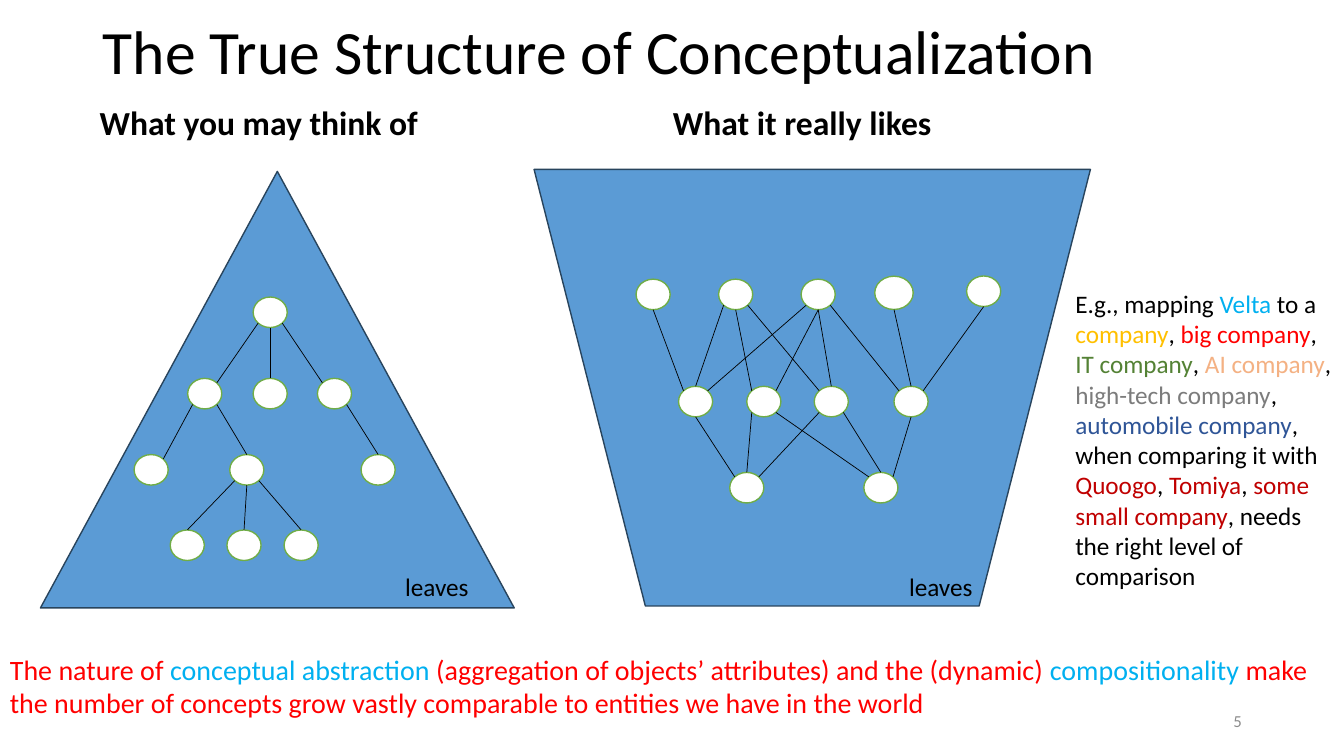
from dataclasses import dataclass
from math import sqrt

from lxml import etree
from pptx import Presentation
from pptx.dml.color import RGBColor
from pptx.enum.shapes import MSO_CONNECTOR, MSO_SHAPE
from pptx.enum.text import MSO_ANCHOR, PP_ALIGN
from pptx.oxml.ns import qn
from pptx.shapes.group import GroupShape
from pptx.slide import Slide
from pptx.util import Cm, Pt

STRAIGHT = MSO_CONNECTOR.STRAIGHT
OVAL = MSO_SHAPE.OVAL
TRIANGLE = MSO_SHAPE.FLOWCHART_EXTRACT
TRAPEZOID = MSO_SHAPE.FLOWCHART_MANUAL_OPERATION
TOP, MIDDLE, BOTTOM = MSO_ANCHOR.TOP, MSO_ANCHOR.MIDDLE, MSO_ANCHOR.BOTTOM
LEFT, RIGHT = PP_ALIGN.LEFT, PP_ALIGN.RIGHT

FONT = "Calibri"
BLACK, WHITE, RED, SKY, DARK_RED = "000000", "FFFFFF", "FF0000", "00B0F0", "C00000"
D = 1 / sqrt(2)
SITES = {"T": (0, -1), "B": (0, 1), "TL": (-D, -D), "TR": (D, -D), "BL": (-D, D), "BR": (D, D)}


@dataclass(frozen=True)
class Label:
    box: tuple[float, float, float, float]
    runs: list[tuple[str, str]]
    size: int
    bold: bool = False
    anchor: MSO_ANCHOR = TOP
    align: PP_ALIGN = LEFT
    spacing: float = 1.0


@dataclass(frozen=True)
class Node:
    x: float
    y: float
    w: float = 0.86
    h: float = 0.77

    def site(self, name: str) -> tuple[float, float]:
        dx, dy = SITES[name]
        return self.x + dx * self.w / 2, self.y + dy * self.h / 2


@dataclass(frozen=True)
class Diagram:
    outline: MSO_SHAPE
    box: tuple[float, float, float, float]
    nodes: dict[str, Node]
    edges: list[str]
    leaves: Label


def color(value: str) -> RGBColor:
    return RGBColor.from_string(value)


def add_label(parent: Slide | GroupShape, label: Label) -> None:
    tf = parent.shapes.add_textbox(*map(Cm, label.box)).text_frame
    tf.word_wrap = True
    tf.vertical_anchor = label.anchor
    p = tf.paragraphs[0]
    p.alignment = label.align
    p.line_spacing = label.spacing
    p.font.name, p.font.size, p.font.bold = FONT, Pt(label.size), label.bold
    for text, hue in label.runs:
        r = p.add_run()
        r.text = text
        r.font.color.rgb = color(hue)


def add_filled(group: GroupShape, kind: MSO_SHAPE, box: tuple[float, float, float, float],
               fill: str, line: str) -> None:
    sp = group.shapes.add_shape(kind, *map(Cm, box))
    sp.shadow.inherit = False
    sp.fill.solid()
    sp.fill.fore_color.rgb = color(fill)
    sp.line.color.rgb = color(line)
    sp.line.width = Pt(1)


def add_edge(group: GroupShape, start: tuple[float, float], end: tuple[float, float]) -> None:
    line = group.shapes.add_connector(STRAIGHT, *map(Cm, start + end))
    line.line.color.rgb = color(BLACK)
    line.line.width = Pt(0.5)
    etree.SubElement(line._element.spPr, qn("a:effectLst"))


def add_diagram(s: Slide, diagram: Diagram) -> None:
    group = s.shapes.add_group_shape()
    add_filled(group, diagram.outline, diagram.box, "5B9BD5", "28445D")
    for n in diagram.nodes.values():
        add_filled(group, OVAL, (n.x - n.w / 2, n.y - n.h / 2, n.w, n.h), WHITE, "70AD47")
    for edge in diagram.edges:
        upper, upper_site, lower, lower_site = edge.split()
        add_edge(group, diagram.nodes[upper].site(upper_site),
                 diagram.nodes[lower].site(lower_site))
    add_label(group, diagram.leaves)


def row(prefix: str, y: float, xs: list[float]) -> dict[str, Node]:
    return {f"{prefix}{i}": Node(x, y) for i, x in enumerate(xs)}


def leaves_label(left: float) -> Label:
    return Label((left, 14.27, 2.44, 1.02), [("leaves", BLACK)], 18)


TREE = Diagram(
    TRIANGLE, (1.02, 4.32, 11.94, 11),
    row("a", 7.87, [6.81]) | row("b", 9.92, [5.16, 6.81, 8.43])
    | row("c", 11.84, [3.81, 6.22, 9.53]) | row("d", 13.74, [4.72, 6.15, 7.59]),
    ["a0 BL b0 TR", "a0 B b1 T", "a0 BR b2 TL", "b0 BL c0 TR", "b0 BR c1 T",
     "c1 BL d0 T", "c1 B d1 T", "c1 BR d2 T", "b2 BR c2 T"],
    leaves_label(9.96),
)

LATTICE = Diagram(
    TRAPEZOID, (13.46, 4.27, 14.02, 11),
    row("a", 7.42, [16.46, 18.54, 20.62])
    | {"a3": Node(22.53, 7.38, 0.97, 0.84), "a4": Node(24.79, 7.34)}
    | row("b", 10.12, [17.53, 19.25, 20.95, 22.96]) | row("c", 12.29, [18.82, 22.2]),
    ["b0 B c0 TL", "b1 BL c0 T", "b2 BL c0 TR", "b2 BR c1 T", "b1 BR c1 TL", "b3 B c1 TR",
     "a0 B b0 TL", "a1 BL b0 T", "a2 BL b0 TR", "a2 B b1 TR", "a1 B b1 TL", "a2 B b2 T",
     "a1 BR b2 TL", "a3 B b3 T", "a2 BR b3 TL", "a4 B b3 TR"],
    leaves_label(22.66),
)

LABELS = [
    Label((2.34, 0.03, 29.21, 2.69), [("The True Structure of Conceptualization", BLACK)], 44,
          anchor=MIDDLE, spacing=0.9),
    Label((2.26, 2.49, 9.45, 1.22), [("What you may think of", BLACK)], 24,
          bold=True, anchor=BOTTOM, spacing=0.9),
    Label((16.71, 2.51, 7.57, 1.22), [("What it really likes", BLACK)], 24,
          bold=True, anchor=BOTTOM, spacing=0.9),
    Label((23.93, 17.65, 7.62, 1.02), [("5", "8C8C8C")], 12, anchor=MIDDLE, align=RIGHT),
    Label((0, 16.31, 33.86, 1.96), [
        ("The nature of ", RED), ("conceptual abstraction ", SKY),
        ("(aggregation of objects’ attributes) and the (dynamic) ", RED),
        ("compositionality", SKY),
        (" make the number of concepts grow vastly comparable to entities we have in the world",
         RED)], 20),
    Label((26.85, 7.14, 6.99, 7.95), [
        ("E.g., mapping ", BLACK), ("Velta", SKY), (" to a ", BLACK), ("company", "FFC000"),
        (", ", BLACK), ("big company", RED), (", ", BLACK), ("IT company", "548235"),
        (", ", BLACK), ("AI company", "F4B183"), (", ", BLACK),
        ("high-tech company", "7C7C7C"), (", ", BLACK), ("automobile company", "2F5597"),
        (", when comparing it with ", BLACK), ("Quoogo", DARK_RED), (", ", BLACK),
        ("Tomiya", DARK_RED), (", ", BLACK), ("some small company", DARK_RED),
        (", needs the right level of comparison", BLACK)], 18),
]


def main() -> None:
    prs = Presentation()
    prs.slide_width, prs.slide_height = Cm(33.87), Cm(19.05)
    s = prs.slides.add_slide(prs.slide_layouts[6])
    for diagram in (TREE, LATTICE):
        add_diagram(s, diagram)
    for label in LABELS:
        add_label(s, label)
    prs.save("out.pptx")


if __name__ == "__main__":
    main()
